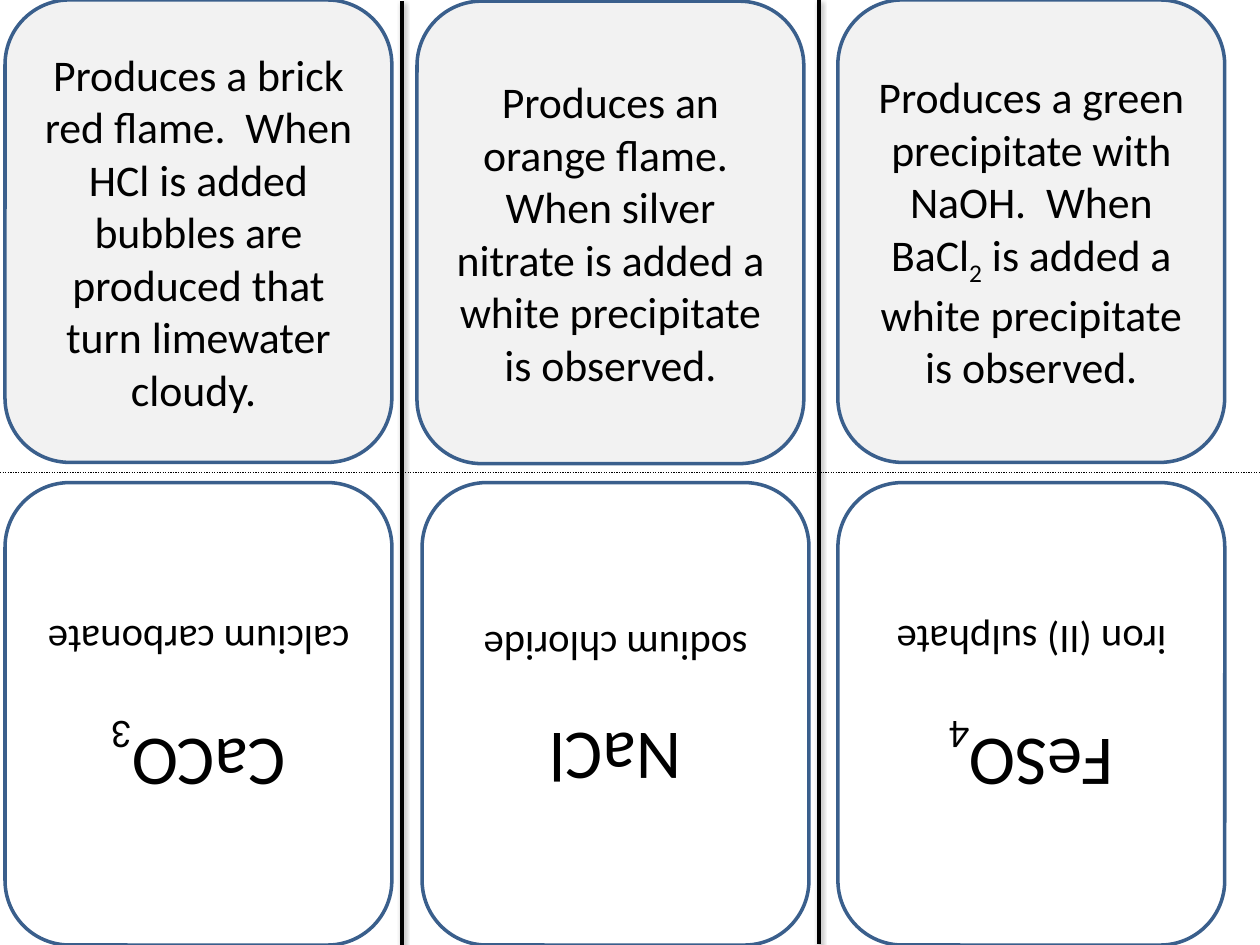
from lxml import etree
from pptx import Presentation
from pptx import util as u
from pptx.dml.color import RGBColor
from pptx.enum import dml, shapes, text
from pptx.oxml import ns

BLACK = RGBColor(0x00, 0x00, 0x00)
WHITE = RGBColor(0xFF, 0xFF, 0xFF)
GREY = RGBColor(0xF2, 0xF2, 0xF2)
BLUE = RGBColor(0x3A, 0x5F, 0x8C)

CARD_WIDTH, CARD_HEIGHT = 3.07, 3.67
ANSWER_TOP = 3.83

CARDS = [
    (0.04, 0, "Produces a brick red flame.  When HCl is added bubbles are "
     "produced that turn limewater cloudy. ",
     0.04, ["CaCO_3", "_calcium carbonate"]),
    (3.31, 0.01, "Produces an orange flame.  When silver nitrate is added a "
     "white precipitate is observed.",
     3.35, ["NaCl", "_sodium chloride"]),
    (6.65, 0, "Produces a green precipitate with NaOH.  When BaCl_2_ is added "
     "a white precipitate is observed.",
     6.65, ["FeSO_4", "_iron (II) sulphate"]),
]


def write_text(paragraph, marked_text, *, size, font="Calibri", color=BLACK):
    paragraph.alignment = text.PP_ALIGN.CENTER
    for index, piece in enumerate(marked_text.split("_")):
        if not piece:
            continue
        run = paragraph.add_run()
        run.text = piece
        run.font.name = font
        run.font.size = u.Pt(size)
        run.font.color.rgb = color
        if index % 2:
            run.font._element.set("baseline", "-25000")


class CardSheet:
    def __init__(self, slide, outline=BLUE, outline_width=2):
        self.slide = slide
        self.outline = outline
        self.outline_width = outline_width

    def card(self, left, top, lines, *, fill, size, rotation=0):
        shape = self.slide.shapes.add_shape(
            shapes.MSO_SHAPE.ROUNDED_RECTANGLE,
            u.Inches(left), u.Inches(top),
            u.Inches(CARD_WIDTH), u.Inches(CARD_HEIGHT))
        shape.shadow.inherit = False
        shape.rotation = rotation
        shape.fill.solid()
        shape.fill.fore_color.rgb = fill
        shape.line.color.rgb = self.outline
        shape.line.width = u.Pt(self.outline_width)
        frame = shape.text_frame
        frame.word_wrap = True
        frame.vertical_anchor = text.MSO_ANCHOR.MIDDLE
        for index, line in enumerate(lines):
            paragraph = frame.add_paragraph() if index else frame.paragraphs[0]
            write_text(paragraph, line, size=size)

    def rule(self, start, end, *, width, dash=None, shadow=False):
        connector = self.slide.shapes.add_connector(
            shapes.MSO_CONNECTOR.STRAIGHT,
            *(u.Inches(value) for value in (*start, *end)))
        connector.line.color.rgb = BLACK
        connector.line.width = u.Pt(width)
        if dash:
            connector.line.dash_style = dash
        effects = etree.SubElement(connector._element.spPr, ns.qn("a:effectLst"))
        if shadow:
            outer = etree.SubElement(
                effects, ns.qn("a:outerShdw"), blurRad=str(u.Pt(3.1)),
                dist=str(u.Pt(1.6)), dir="5400000", rotWithShape="0")
            color = etree.SubElement(outer, ns.qn("a:srgbClr"), val=str(BLACK))
            etree.SubElement(color, ns.qn("a:alpha"), val="38000")


def main():
    presentation = Presentation()
    presentation.slide_width = u.Inches(10)
    presentation.slide_height = u.Inches(7.5)
    sheet = CardSheet(presentation.slides.add_slide(presentation.slide_layouts[6]))

    for clue_left, clue_top, clue, answer_left, answer in CARDS:
        sheet.card(clue_left, clue_top, [clue], fill=GREY, size=25)
        sheet.card(answer_left, ANSWER_TOP, answer, fill=WHITE, size=40, rotation=180)

    sheet.rule((0, 3.75), (10, 3.75), width=0.75, dash=dml.MSO_LINE.ROUND_DOT)
    sheet.rule((3.19, 0.01), (3.19, 7.5), width=2, shadow=True)
    sheet.rule((6.5, 0), (6.5, 7.49), width=2, shadow=True)
    presentation.save("out.pptx")


if __name__ == "__main__":
    main()
